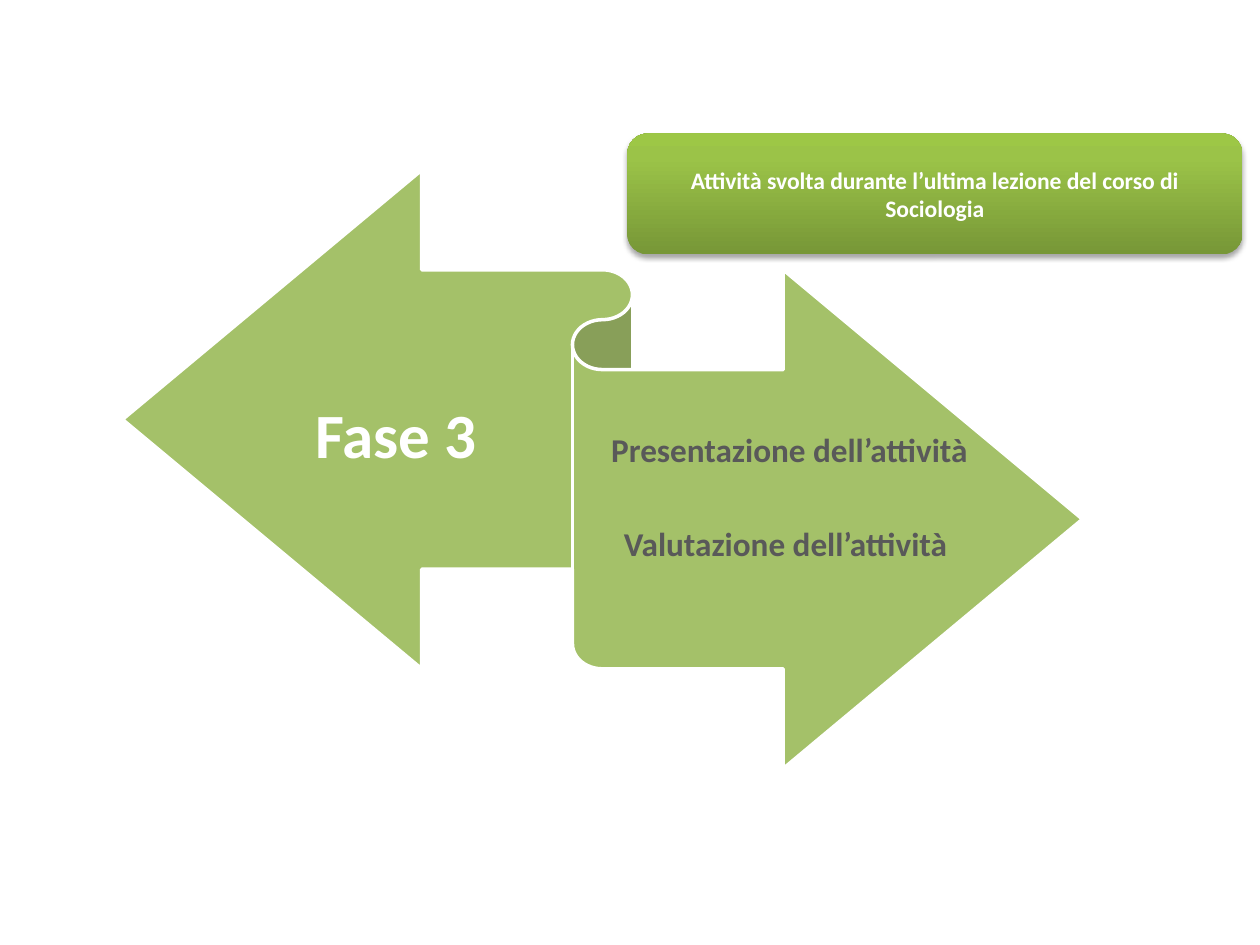
from copy import deepcopy

from lxml.etree import SubElement
from pptx import Presentation
from pptx.dml.color import RGBColor
from pptx.enum.shapes import MSO_SHAPE
from pptx.enum.text import MSO_ANCHOR, PP_ALIGN
from pptx.oxml.ns import qn
from pptx.util import Pt

WHITE = RGBColor(0xFF, 0xFF, 0xFF)
BLACK = RGBColor(0x00, 0x00, 0x00)
GREY = RGBColor(0x59, 0x59, 0x59)
GREEN = RGBColor(0x9B, 0xBB, 0x59)
BANNER_STOPS = [
    (0, RGBColor(0x77, 0x97, 0x37)),
    (0.8, RGBColor(0x9B, 0xC3, 0x48)),
    (1, RGBColor(0x9D, 0xC7, 0x46)),
]


def write_text(shape, lines, size, color, line_spacing=1.0, gap=0):
    """Fill a shape with centred bold lines, gap points apart."""
    frame = shape.text_frame
    frame.word_wrap = True
    frame.vertical_anchor = MSO_ANCHOR.MIDDLE
    frame.text = "\n".join(lines)
    for paragraph in frame.paragraphs:
        paragraph.alignment = PP_ALIGN.CENTER
        paragraph.line_spacing = line_spacing
        paragraph.font.name = "Calibri"
        paragraph.font.size = Pt(size)
        paragraph.font.bold = True
        paragraph.font.color.rgb = color
    for paragraph in frame.paragraphs[:-1]:
        paragraph.space_after = Pt(gap)


def add_ribbon(page, left, top, width, height):
    ribbon = page.shapes.add_shape(
        MSO_SHAPE.LEFT_RIGHT_RIBBON, Pt(left), Pt(top), Pt(width), Pt(height))
    ribbon.shadow.inherit = False
    ribbon.fill.solid()
    ribbon.fill.fore_color.rgb = GREEN
    color = ribbon.fill._xPr.find(qn("a:solidFill"))[0]
    SubElement(color, qn("a:alpha"), val="90000")
    ribbon.line.color.rgb = WHITE
    ribbon.line.width = Pt(2)


def add_label(page, left, top, width, height, lines, size, color, insets, gap=0):
    box = page.shapes.add_textbox(Pt(left), Pt(top), Pt(width), Pt(height))
    frame = box.text_frame
    frame.margin_left = frame.margin_right = 0
    frame.margin_top, frame.margin_bottom = map(Pt, insets)
    write_text(box, lines, size, color, line_spacing=0.9, gap=gap)


def fill_gradient(shape, stops, angle):
    shape.fill.gradient()
    shape.fill.gradient_angle = angle
    stop_list = shape._element.spPr.find(qn("a:gradFill")).find(qn("a:gsLst"))
    while len(stop_list) < len(stops):
        stop_list.append(deepcopy(stop_list[-1]))
    for stop, (position, color) in zip(shape.fill.gradient_stops, stops):
        stop.position = position
        stop.color.rgb = color


def add_soft_shadow(shape, blur, distance, opacity):
    """Cast a black shadow straight down; opacity is in percent."""
    shape.shadow.inherit = False
    effects = shape._element.spPr.find(qn("a:effectLst"))
    shadow = SubElement(
        effects, qn("a:outerShdw"), blurRad=str(Pt(blur)), dist=str(Pt(distance)),
        dir=str(90 * 60000), rotWithShape="0")
    color = SubElement(shadow, qn("a:srgbClr"), val=str(BLACK))
    SubElement(color, qn("a:alpha"), val=str(opacity * 1000))


def add_banner(page, left, top, width, height, line):
    banner = page.shapes.add_shape(
        MSO_SHAPE.ROUNDED_RECTANGLE, Pt(left), Pt(top), Pt(width), Pt(height))
    fill_gradient(banner, BANNER_STOPS, 90)
    banner.line.fill.background()
    add_soft_shadow(banner, blur=3.1, distance=1.8, opacity=35)
    write_text(banner, [line], 13.5, WHITE)


def main():
    deck = Presentation()
    deck.slide_width, deck.slide_height = Pt(720), Pt(540)
    page = deck.slides.add_slide(deck.slide_layouts[6])

    add_ribbon(page, 70, 97.2, 548.6, 342)
    add_label(page, 136.1, 197.3, 180.7, 107.3, ["Fase 3"], 36, WHITE, (10, 10.8))
    add_label(page, 344.2, 231.8, 213.8, 107.3,
              ["Presentazione dell’attività", "Valutazione dell’attività "],
              19, GREY, (5, 5.8), gap=33.4)
    add_banner(page, 358.5, 76.3, 351.4, 69.1,
               "Attività svolta durante l’ultima lezione del corso di Sociologia")

    deck.save("out.pptx")


if __name__ == "__main__":
    main()
